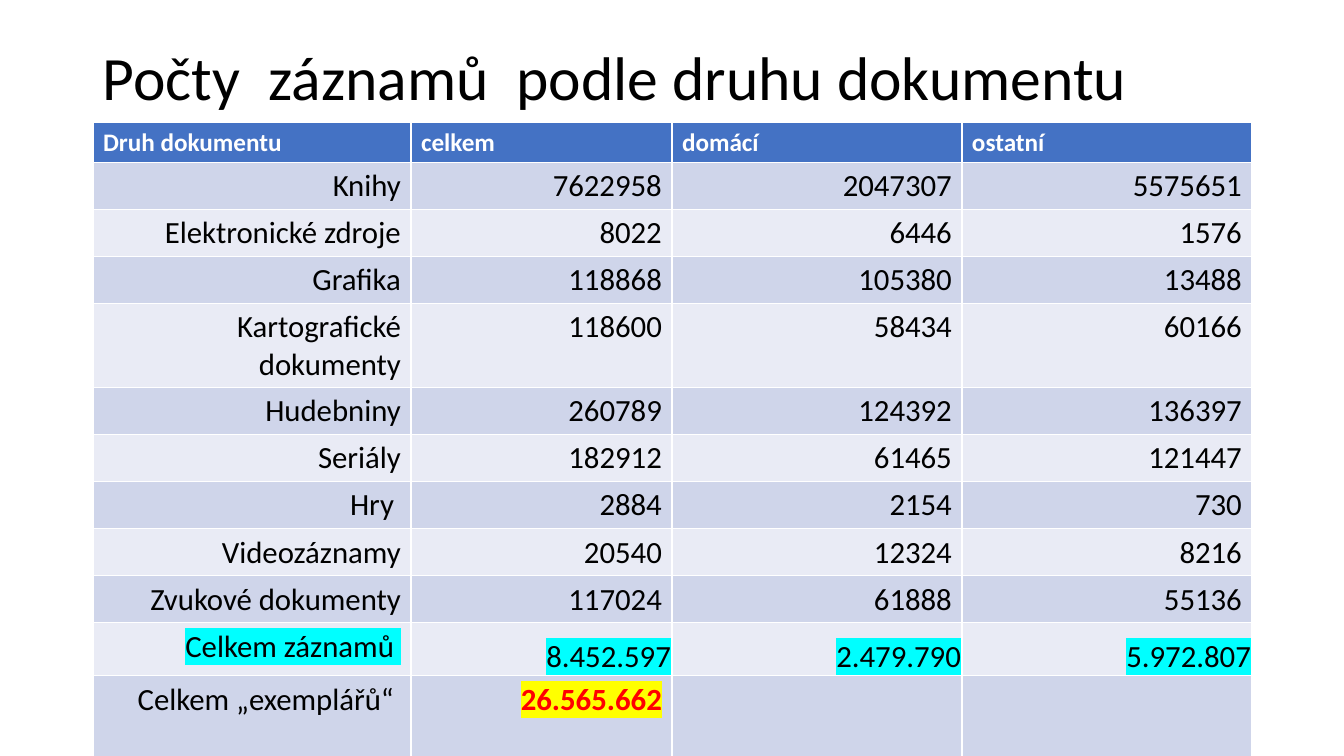
from dataclasses import dataclass
from typing import Optional

from lxml import etree
from pptx import Presentation
from pptx import util as u
from pptx.dml.color import RGBColor
from pptx.enum import text
from pptx.oxml import ns

PX = 914400 / 100.8


@dataclass(frozen=True)
class Theme:
    font: str = "Calibri"
    ink: str = "000000"
    paper: str = "FFFFFF"
    header: str = "4472C4"
    bands: tuple[str, str] = ("CFD5EA", "E9EBF5")
    cyan: str = "00FFFF"
    yellow: str = "FFFF00"
    red: str = "FF0000"
    title_size: int = 44
    header_size: int = 18
    body_size: int = 22


THEME = Theme()


@dataclass(frozen=True)
class Style:
    size: int = THEME.body_size
    color: str = THEME.ink
    bold: bool = False
    highlight: Optional[str] = None


BODY = Style()
TITLE = Style(size=THEME.title_size)
HEADER = Style(size=THEME.header_size, color=THEME.paper, bold=True)
TOTAL = Style(highlight=THEME.cyan)
COPIES = Style(color=THEME.red, bold=True, highlight=THEME.yellow)


@dataclass(frozen=True)
class Row:
    label: str
    values: tuple[str, ...]
    height: int = 41
    label_style: Style = BODY
    value_style: Style = BODY
    tight: bool = False


LEFT, WIDTH = 93, 1159
TITLE_TOP, TITLE_HEIGHT = 40, 82
TABLE_TOP = TITLE_TOP + TITLE_HEIGHT
COLUMN_WIDTHS = (318, 261, 290, 290)

HEADING = Row("Druh dokumentu", ("celkem", "domácí", "ostatní"), 38, HEADER, HEADER)
RECORDS = (
    Row("Knihy", ("7622958", "2047307", "5575651")),
    Row("Elektronické zdroje", ("8022", "6446", "1576")),
    Row("Grafika", ("118868", "105380", "13488")),
    Row("Kartografické dokumenty", ("118600", "58434", "60166"), 73),
    Row("Hudebniny", ("260789", "124392", "136397")),
    Row("Seriály", ("182912", "61465", "121447")),
    Row("Hry ", ("2884", "2154", "730")),
    Row("Videozáznamy", ("20540", "12324", "8216")),
    Row("Zvukové dokumenty", ("117024", "61888", "55136")),
    Row("Celkem záznamů ", ("8.452.597", "2.479.790", "5.972.807"), 53, TOTAL, TOTAL, True),
    Row("Celkem „exemplářů“ ", ("26.565.662", "", ""), 99, BODY, COPIES),
)


def px(length: int) -> u.Emu:
    return u.Emu(round(length * PX))


def add_span(para, wording: str, style: Style) -> None:
    span = para.add_run()
    span.text = wording
    span.font.name = THEME.font
    span.font.size = u.Pt(style.size)
    span.font.bold = style.bold
    span.font.color.rgb = RGBColor.from_string(style.color)
    if style.highlight:
        highlight = etree.Element(ns.qn("a:highlight"))
        etree.SubElement(highlight, ns.qn("a:srgbClr"), val=style.highlight)
        span.font.fill._xPr.find(ns.qn("a:solidFill")).addnext(highlight)


def add_title(page, wording: str) -> None:
    box = page.shapes.add_textbox(px(LEFT), px(TITLE_TOP), px(WIDTH), px(TITLE_HEIGHT))
    frame = box.text_frame
    frame.word_wrap = True
    frame.vertical_anchor = text.MSO_ANCHOR.MIDDLE
    para = frame.paragraphs[0]
    para.line_spacing = 0.9
    add_span(para, wording, TITLE)


def fill_cell(cell, wording: str, style: Style, fill: str, align) -> None:
    cell.fill.solid()
    cell.fill.fore_color.rgb = RGBColor.from_string(fill)
    para = cell.text_frame.paragraphs[0]
    para.alignment = align
    if wording:
        add_span(para, wording, style)


def tighten(cell) -> None:
    cell.vertical_anchor = text.MSO_ANCHOR.BOTTOM
    cell.margin_left = cell.margin_right = cell.margin_top = px(1)
    cell.margin_bottom = 0


def add_records(page, rows: tuple[Row, ...]) -> None:
    height = sum(row.height for row in rows)
    table = page.shapes.add_table(
        len(rows), len(COLUMN_WIDTHS), px(LEFT), px(TABLE_TOP), px(WIDTH), px(height)
    ).table
    for column, width in zip(table.columns, COLUMN_WIDTHS):
        column.width = px(width)
    for index, row in enumerate(rows):
        table.rows[index].height = px(row.height)
        fill = THEME.bands[(index - 1) % 2] if index else THEME.header
        align = text.PP_ALIGN.RIGHT if index else text.PP_ALIGN.LEFT
        fill_cell(table.cell(index, 0), row.label, row.label_style, fill, align)
        for column, value in enumerate(row.values, start=1):
            cell = table.cell(index, column)
            fill_cell(cell, value, row.value_style, fill, align)
            if row.tight:
                tighten(cell)


def main() -> None:
    deck = Presentation()
    deck.slide_width, deck.slide_height = px(1344), px(756)
    page = deck.slides.add_slide(deck.slide_layouts[6])
    add_title(page, "Počty  záznamů  podle druhu dokumentu")
    add_records(page, (HEADING, *RECORDS))
    deck.save("out.pptx")


if __name__ == "__main__":
    main()
